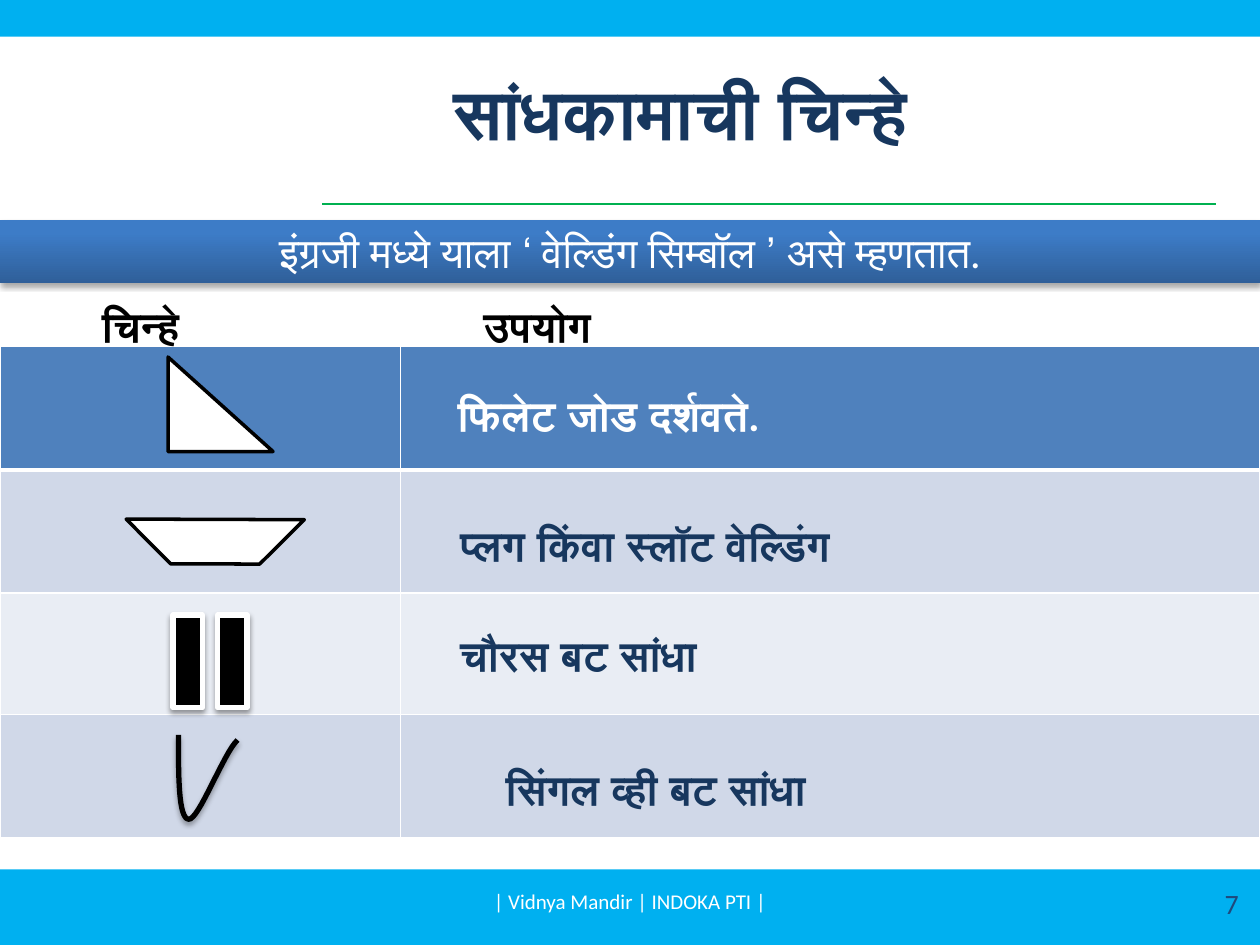
from lxml import etree
from pptx import Presentation
from pptx.dml.color import RGBColor
from pptx.enum import shapes as sh, text as tx
from pptx.oxml import ns
from pptx.util import Pt

SKY = RGBColor(0x00, 0xB0, 0xF0)
GREEN = RGBColor(0x00, 0xB0, 0x50)
NAVY = RGBColor(0x17, 0x37, 0x5E)
SLATE = RGBColor(0x1F, 0x49, 0x7D)
BAND_DARK = RGBColor(0x2F, 0x5F, 0x99)
BAND_LIGHT = RGBColor(0x3D, 0x7C, 0xC7)
BLUE = RGBColor(0x4F, 0x81, 0xBD)
PALE = RGBColor(0xD0, 0xD8, 0xE8)
PALER = RGBColor(0xE9, 0xED, 0xF4)
WHITE = RGBColor(0xFF, 0xFF, 0xFF)
BLACK = RGBColor(0x00, 0x00, 0x00)

LEFT, CENTER, RIGHT = tx.PP_ALIGN.LEFT, tx.PP_ALIGN.CENTER, tx.PP_ALIGN.RIGHT

# use, fill, text colour, left inset, top inset
USES = [
    ("फिलेट जोड दर्शवते.", BLUE, WHITE, 32.5, 25.6),
    ("प्लग किंवा स्लॉट वेल्डिंग", PALE, NAVY, 34, 33),
    ("चौरस बट सांधा", PALER, NAVY, 34, 25.6),
    ("सिंगल व्ही बट सांधा", PALE, NAVY, 60, 33),
]
ROW_HEIGHTS = [70.5, 70.5, 69.3, 70.5]
COLUMN_WIDTHS = [229, 491]


def points(box):
    return [Pt(value) for value in box]


def add_xml(parent, tag, **attributes):
    child = etree.SubElement(parent, ns.qn(tag))
    for key, value in attributes.items():
        child.set(key, str(value))
    return child


def write(frame, content, size, color, bold=False, align=LEFT):
    frame.word_wrap = True
    paragraph = frame.paragraphs[0]
    paragraph.alignment = align
    run = paragraph.add_run()
    run.text = content
    run.font.color.rgb = color
    styles = {"name": "Calibri", "size": Pt(size), "bold": bold}
    for key, value in styles.items():
        setattr(run.font, key, value)


def label(slide, box, content, size, color, bold=False, align=LEFT,
          anchor=tx.MSO_ANCHOR.TOP):
    frame = slide.shapes.add_textbox(*points(box)).text_frame
    frame.vertical_anchor = anchor
    write(frame, content, size, color, bold, align)
    return frame


def add_shape(slide, preset, box, fill, line=None, width=0):
    shape = slide.shapes.add_shape(preset, *points(box))
    shape.shadow.inherit = False
    shape.fill.solid()
    shape.fill.fore_color.rgb = fill
    if line is None:
        shape.line.fill.background()
    else:
        shape.line.color.rgb = line
        shape.line.width = Pt(width)
    return shape


def drop_shadow(shape, opacity):
    """Give the shape a soft black shadow straight below it."""
    shape.shadow.inherit = False
    effects = shape._element.spPr.find(ns.qn("a:effectLst"))
    shadow = add_xml(effects, "a:outerShdw", blurRad=Pt(3.1), dist=Pt(1.8),
                     dir=5400000, rotWithShape=0)
    color = add_xml(shadow, "a:srgbClr", val="000000")
    add_xml(color, "a:alpha", val=opacity * 1000)


def frame_bars(slide, width, height):
    add_shape(slide, sh.MSO_SHAPE.RECTANGLE, (0, 0, width, 20.9), SKY)
    add_shape(slide, sh.MSO_SHAPE.RECTANGLE, (0, height - 43.2, width, 43.2), SKY)
    middle = tx.MSO_ANCHOR.MIDDLE
    label(slide, (246, 500.4, 228, 28.8), "| Vidnya Mandir | INDOKA PTI |",
          12, WHITE, align=CENTER, anchor=middle)
    label(slide, (547.2, 501.8, 167.8, 28.8), "7", 16, SLATE,
          align=RIGHT, anchor=middle)


def heading(slide, left, top):
    label(slide, (left, top, 365.8, 55.4), "सांधकामाची चिन्हे", 40, NAVY, True)
    rule = slide.shapes.add_connector(
        sh.MSO_CONNECTOR.STRAIGHT, *points((184.3, 116.6, 694.8, 116.6)))
    rule.line.color.rgb = GREEN
    rule.line.width = Pt(0.75)
    add_xml(rule._element.spPr, "a:effectLst")


def english_name_band(slide, box):
    band = add_shape(slide, sh.MSO_SHAPE.RECTANGLE, box, BAND_LIGHT)
    band.fill.gradient()
    band.fill.gradient_angle = 90
    stops = ((0, BAND_DARK), (0.8, BAND_LIGHT))
    for stop, (position, color) in zip(band.fill.gradient_stops, stops):
        stop.position = position
        stop.color.rgb = color
    drop_shadow(band, 35)
    write(band.text_frame, "इंग्रजी मध्ये याला ‘ वेल्डिंग सिम्बॉल ’ असे म्हणतात.",
          24, WHITE, align=CENTER)


def column_heads(slide, box):
    frame = label(slide, box, "चिन्हे\tउपयोग", 24, BLACK, True)
    frame.margin_left = Pt(28)
    tabs = add_xml(frame.paragraphs[0]._p.get_or_add_pPr(), "a:tabLst")
    add_xml(tabs, "a:tab", pos=Pt(218), algn="l")


def style_cell(cell, fill, bottom):
    properties = cell._tc.get_or_add_tcPr()
    for side, width in (("L", 1), ("R", 1), ("T", 1), ("B", bottom)):
        border = add_xml(properties, f"a:ln{side}", w=Pt(width))
        add_xml(add_xml(border, "a:solidFill"), "a:srgbClr", val=WHITE)
    cell.fill.solid()
    cell.fill.fore_color.rgb = fill


def uses_table(slide, left, top):
    box = (left, top, sum(COLUMN_WIDTHS), sum(ROW_HEIGHTS))
    table = slide.shapes.add_table(len(USES), 2, *points(box)).table
    for column, width in zip(table.columns, COLUMN_WIDTHS):
        column.width = Pt(width)
    for index, (use, fill, color, inset, drop) in enumerate(USES):
        row = table.rows[index]
        row.height = Pt(ROW_HEIGHTS[index])
        for cell in row.cells:
            style_cell(cell, fill, 3 if index == 0 else 1)
        use_cell = row.cells[1]
        use_cell.margin_left = Pt(inset)
        use_cell.margin_top = Pt(drop)
        write(use_cell.text_frame, use, 24, color, bold=True)


def bezier(start, first, second, end, steps=16):
    """Return the points after the start of a cubic curve."""
    curve = []
    for step in range(1, steps + 1):
        t = step / steps
        weights = ((1 - t) ** 3, 3 * t * (1 - t) ** 2, 3 * t * t * (1 - t), t ** 3)
        curve.append(tuple(
            sum(w * p[axis] for w, p in zip(weights, (start, first, second, end)))
            for axis in (0, 1)))
    return curve


def single_v(slide, left, top):
    bottom = (5.8, 48.2)
    curve = (bezier((0, 0), (0, 23.8), (0, 47.5), bottom)
             + bezier(bottom, (11.5, 49), (25.9, 10.1), (33.8, 2.9)))
    builder = slide.shapes.build_freeform(Pt(left), Pt(top))
    builder.add_line_segments(
        [(Pt(left + x), Pt(top + y)) for x, y in curve], close=False)
    mark = builder.convert_to_shape()
    mark.fill.background()
    mark.line.color.rgb = BLACK
    mark.line.width = Pt(3)
    drop_shadow(mark, 35)


def weld_symbols(slide):
    add_shape(slide, sh.MSO_SHAPE.RIGHT_TRIANGLE, (96, 204, 60, 54), WHITE, BLACK, 2)
    slot = add_shape(slide, sh.MSO_SHAPE.DIAGONAL_STRIPE, (87, 260.8, 72, 72),
                     WHITE, BLACK, 2)
    slot.rotation = 225.2
    square = add_shape(slide, sh.MSO_SHAPE.MATH_EQUAL, (84, 342, 72, 72),
                       BLACK, WHITE, 3)
    square.rotation = 90
    drop_shadow(square, 38)
    single_v(slide, 102, 420)


def main():
    deck = Presentation()
    deck.slide_width, deck.slide_height = Pt(720), Pt(540)
    slide = deck.slides.add_slide(deck.slide_layouts[6])
    frame_bars(slide, 720, 540)
    heading(slide, 252, 36)
    english_name_band(slide, (0, 126, 720, 36))
    uses_table(slide, 0, 198)
    column_heads(slide, (30.2, 168, 689.8, 36))
    weld_symbols(slide)
    deck.save("out.pptx")


if __name__ == "__main__":
    main()
